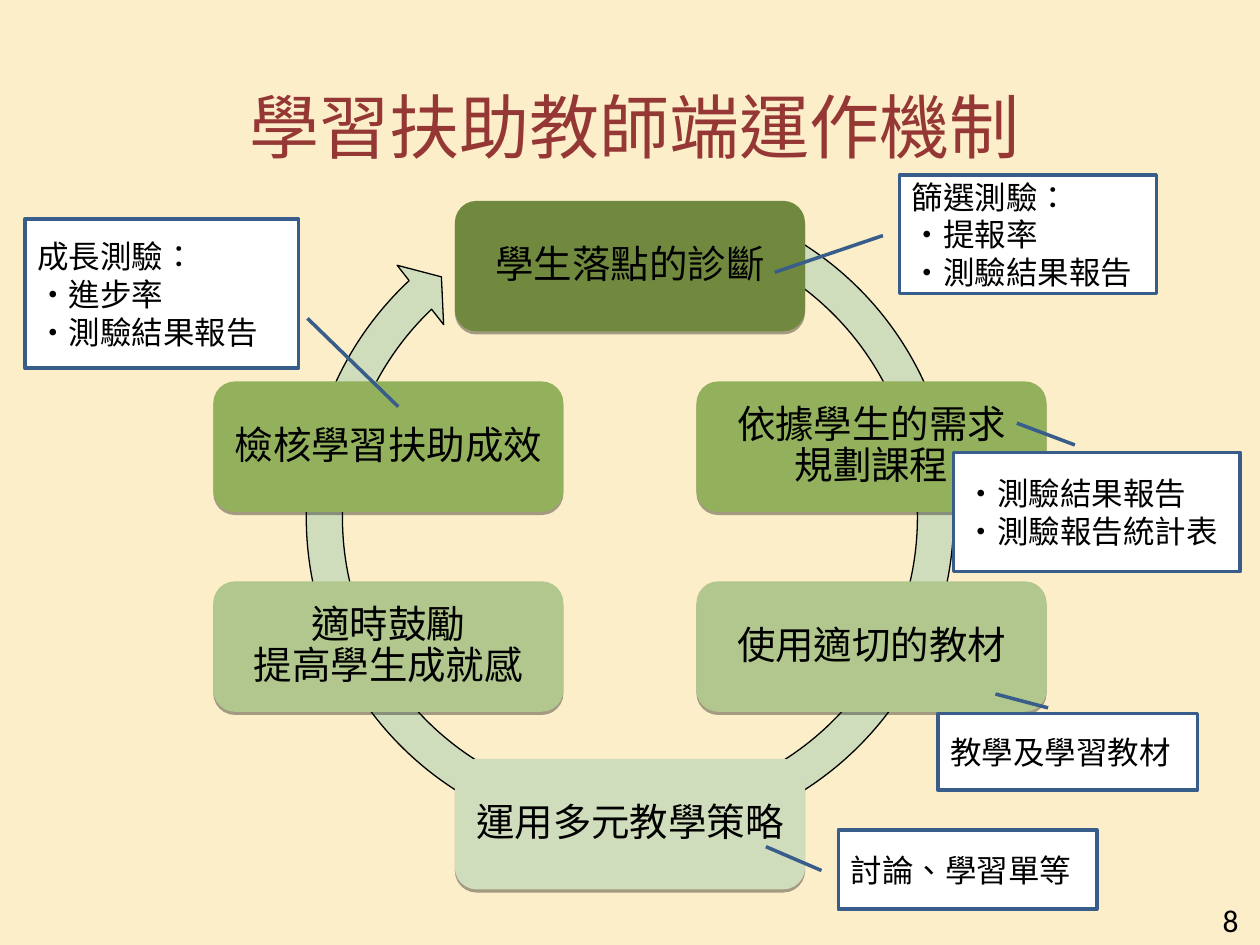
from lxml.etree import SubElement
from pptx import Presentation
from pptx.dml.color import RGBColor
from pptx.enum.lang import MSO_LANGUAGE_ID as Language
from pptx.enum.shapes import MSO_SHAPE as Shape
from pptx.enum.text import MSO_ANCHOR as Anchor, PP_ALIGN as Align
from pptx.oxml.ns import qn
from pptx.util import Cm, Pt

CREAM = RGBColor(0xFB, 0xEE, 0xC9)
BRICK = RGBColor(0x95, 0x37, 0x35)
BLACK = RGBColor(0, 0, 0)
WHITE = RGBColor(0xFF, 0xFF, 0xFF)
BLUE = RGBColor(0x38, 0x5D, 0x8A)
DARK_GREEN = RGBColor(0x71, 0x89, 0x3F)
GREEN = RGBColor(0x93, 0xB1, 0x5C)
LIGHT_GREEN = RGBColor(0xB1, 0xC7, 0x8D)
PALE_GREEN = RGBColor(0xD0, 0xDD, 0xBC)

CJK_FONT = "Noto Sans CJK SC"
CENTER_X, CENTER_Y = 12.7, 10.43
RING_SIZE, RING_THICKNESS, ARROW_HALF_WIDTH = 13.84, 0.73, 0.76
RING_START, RING_END, ARROW_ANGLE = 291.8, 226.7, 5.2
ANGLE_UNIT = 0.6
NODE_WIDTH, NODE_HEIGHT = 7.06, 2.63
COLUMN_OFFSET = 4.87

NODES = [
    ("學生落點的診斷", 0, 4.05, DARK_GREEN),
    ("依據學生的需求\v規劃課程", 1, 7.69, GREEN),
    ("使用適切的教材", 1, 11.72, LIGHT_GREEN),
    ("運用多元教學策略", 0, 15.3, PALE_GREEN),
    ("適時鼓勵\v提高學生成就感", -1, 11.72, LIGHT_GREEN),
    ("檢核學習扶助成效", -1, 7.69, GREEN),
]

CALLOUTS = [
    ("篩選測驗：\n‧提報率\n‧測驗結果報告",
     (18.13, 3.53, 5.18, 2.39), (17.8, 4.75), (15.62, 5.49)),
    ("成長測驗：\n‧進步率\n‧測驗結果報告",
     (0.5, 4.42, 5.52, 3.0), (6.2, 6.42), (8.03, 8.2)),
    ("討論、學習單等",
     (16.9, 16.73, 5.21, 1.6), (16.56, 17.55), (15.44, 17.07)),
    ("‧測驗結果報告\n‧測驗報告統計表",
     (19.22, 9.12, 5.78, 2.4), (21.67, 8.97), (20.5, 8.53)),
]
MATERIALS_CALLOUT = (
    "教學及學習教材", (18.91, 14.38, 5.23, 1.55), (21.13, 14.27), (20.07, 13.99))


def write_text(shape, text, size, color=BLACK, align=Align.LEFT, font_name=CJK_FONT):
    frame = shape.text_frame
    frame.text = text
    frame.word_wrap = True
    frame.vertical_anchor = Anchor.MIDDLE
    for paragraph in frame.paragraphs:
        paragraph.alignment = align
        for run in paragraph.runs:
            run.font.size = Pt(size)
            run.font.name = font_name
            run.font.color.rgb = color
            run.font.language_id = Language.TRADITIONAL_CHINESE
            SubElement(run.font._element, qn("a:ea"), typeface=font_name)


def add_title(slide, text):
    title = slide.shapes.title
    title.left, title.top, title.width, title.height = map(Cm, (3.48, 0.94, 18.62, 3.18))
    write_text(title, text, 40, BRICK, Align.CENTER)


def add_ring_arrow(slide):
    ring = slide.shapes.add_shape(
        Shape.CIRCULAR_ARROW, Cm(CENTER_X - RING_SIZE / 2),
        Cm(CENTER_Y - RING_SIZE / 2), Cm(RING_SIZE), Cm(RING_SIZE))
    adjustments = (RING_THICKNESS / RING_SIZE, ARROW_ANGLE * ANGLE_UNIT,
                   RING_END * ANGLE_UNIT, RING_START * ANGLE_UNIT,
                   ARROW_HALF_WIDTH / RING_SIZE)
    for index, value in enumerate(adjustments):
        ring.adjustments[index] = value
    ring.shadow.inherit = False
    ring.fill.solid()
    ring.fill.fore_color.rgb = PALE_GREEN
    ring.line.color.rgb = BLACK
    ring.line.width = Pt(0.75)


def add_drop_shadow(shape):
    shape.shadow.inherit = False
    effects = shape._element.spPr.find(qn("a:effectLst"))
    shadow = SubElement(effects, qn("a:outerShdw"), blurRad="0", dist=str(Pt(1.8)),
                        dir="5400000", rotWithShape="0")
    color = SubElement(shadow, qn("a:srgbClr"), val=str(BLACK))
    SubElement(color, qn("a:alpha"), val="35000")


def add_node(slide, text, column, top, color):
    left = CENTER_X + column * COLUMN_OFFSET - NODE_WIDTH / 2
    node = slide.shapes.add_shape(
        Shape.ROUNDED_RECTANGLE, Cm(left), Cm(top), Cm(NODE_WIDTH), Cm(NODE_HEIGHT))
    node.fill.solid()
    node.fill.fore_color.rgb = color
    node.line.fill.background()
    add_drop_shadow(node)
    write_text(node, text, 22, align=Align.CENTER)
    frame = node.text_frame
    frame.margin_left = frame.margin_right = Cm(0.23)
    frame.margin_top = frame.margin_bottom = Cm(0.23)
    frame.paragraphs[0].line_spacing = 0.9
    frame.paragraphs[0].space_after = Pt(9)


def add_callout(slide, text, box, start, end):
    left, top, width, height = box
    callout = slide.shapes.add_shape(Shape.LINE_CALLOUT_1, *map(Cm, box))
    for index, (x, y) in enumerate((start, end)):
        callout.adjustments[2 * index] = (y - top) / height
        callout.adjustments[2 * index + 1] = (x - left) / width
    callout.shadow.inherit = False
    callout.fill.solid()
    callout.fill.fore_color.rgb = WHITE
    callout.line.color.rgb = BLUE
    callout.line.width = Pt(2)
    write_text(callout, text, 18)


def add_page_number(slide, number):
    box = slide.shapes.add_textbox(Cm(19.3), Cm(18.03), Cm(5.92), Cm(1.02))
    write_text(box, number, 18, align=Align.RIGHT, font_name="Calibri")


def main():
    presentation = Presentation()
    presentation.slide_width, presentation.slide_height = Cm(25.4), Cm(19.05)
    slide = presentation.slides.add_slide(presentation.slide_layouts[5])
    slide.background.fill.solid()
    slide.background.fill.fore_color.rgb = CREAM
    add_title(slide, "學習扶助教師端運作機制")
    add_ring_arrow(slide)
    for node in NODES:
        add_node(slide, *node)
    for callout in CALLOUTS:
        add_callout(slide, *callout)
    add_page_number(slide, "8")
    add_callout(slide, *MATERIALS_CALLOUT)
    presentation.save("out.pptx")


if __name__ == "__main__":
    main()
